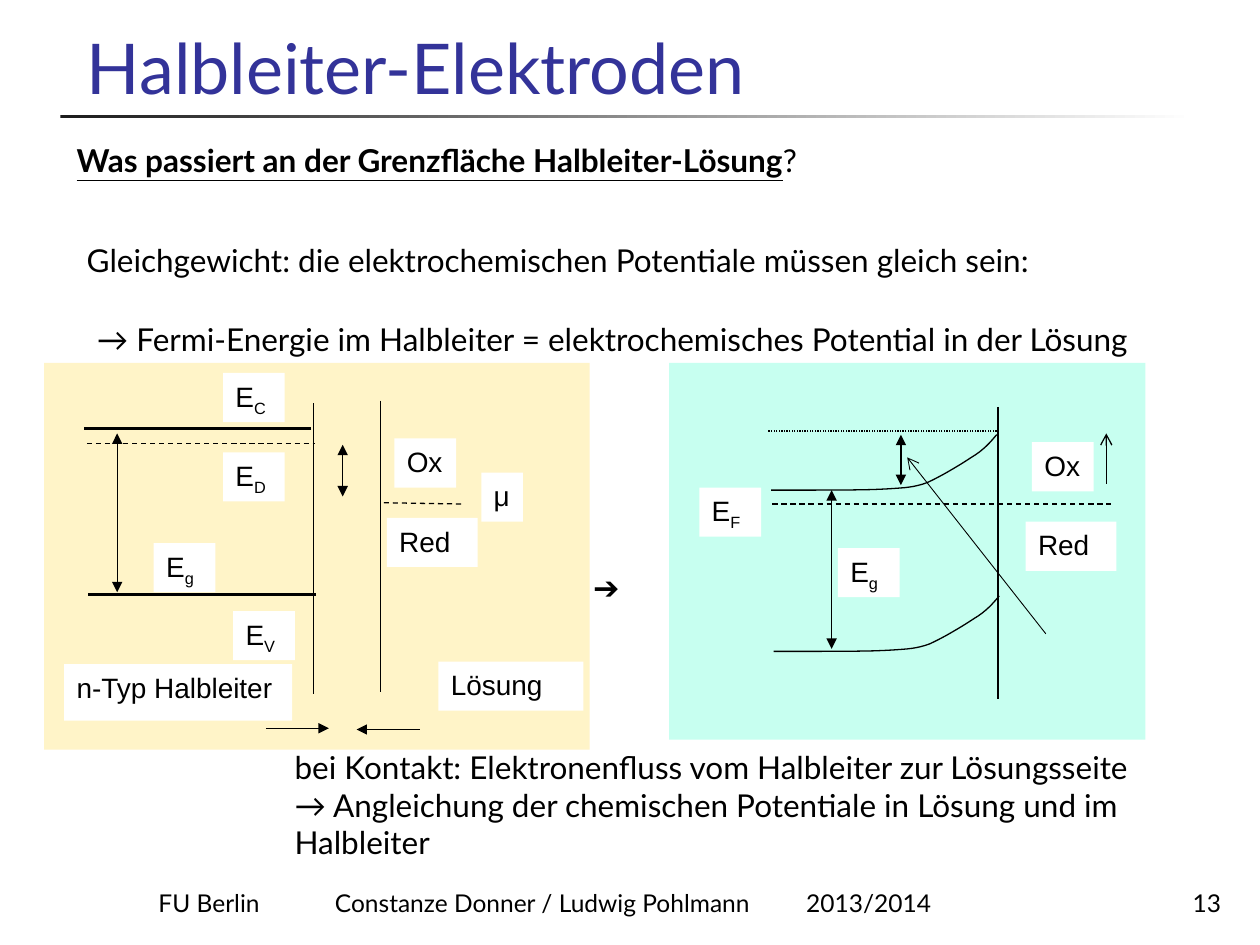
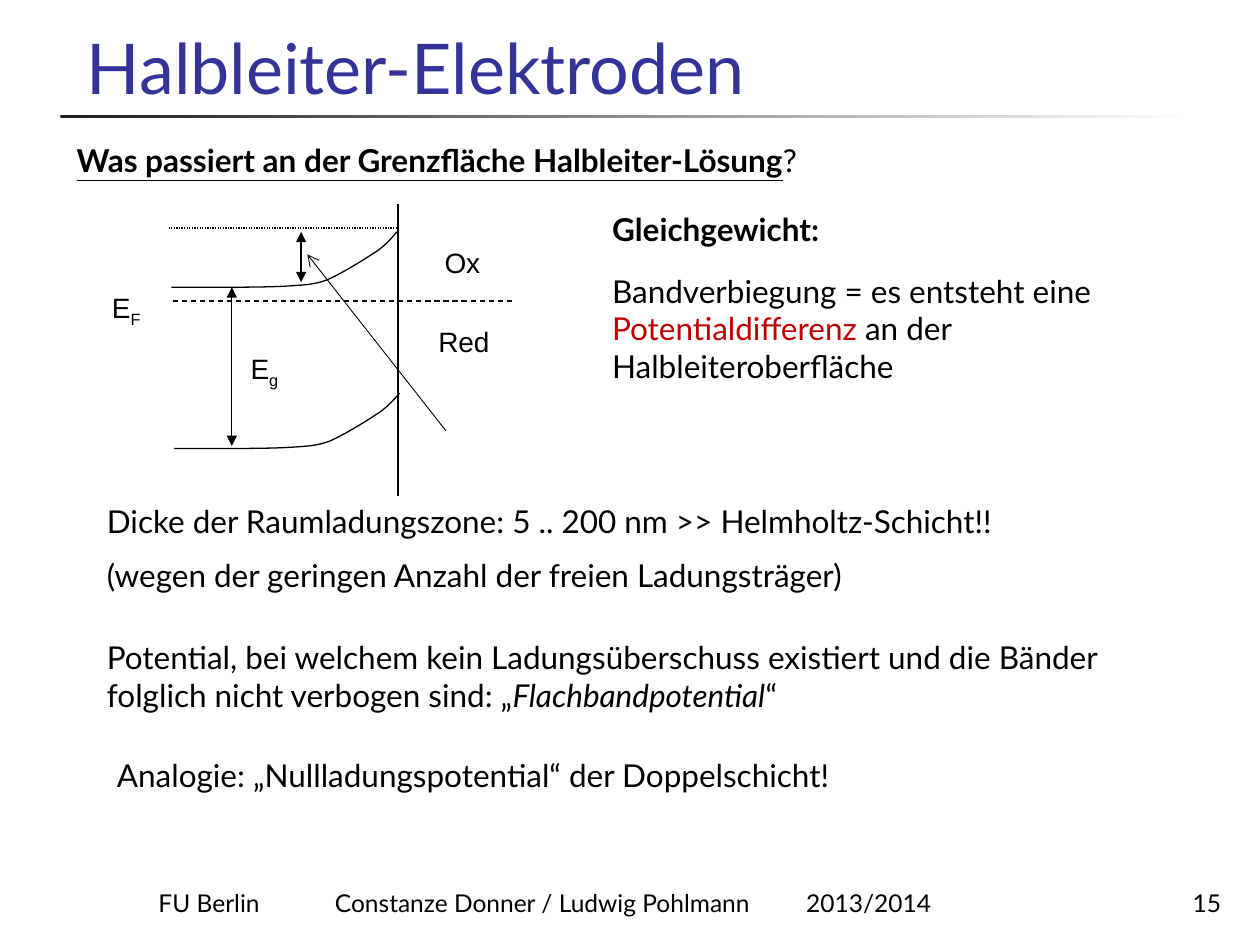
from lxml.etree import SubElement
from pptx import Presentation
from pptx.dml.color import RGBColor
from pptx.enum.dml import MSO_LINE
from pptx.enum.shapes import MSO_CONNECTOR, MSO_SHAPE
from pptx.enum.text import MSO_ANCHOR, MSO_AUTO_SIZE, PP_ALIGN
from pptx.oxml.ns import qn
from pptx.util import Inches, Pt

COLORS = {
    "black": "000000",
    "white": "FFFFFF",
    "title": "333399",
    "accent": "C00000",
    "rule": "1C1C1C",
    "before": "FFF4C8",
    "after": "C7FFF0",
}
RGB = {name: RGBColor.from_string(value) for name, value in COLORS.items()}

presentation = Presentation()
presentation.slide_width = Inches(10)
presentation.slide_height = Inches(7.5)
COLUMN = presentation.slide_width // 100
ROW = presentation.slide_height // 75


def write(slide, box, text, shape=None, size=18, font="Lato", color="black", fill=None,
          anchor=MSO_ANCHOR.MIDDLE, align=PP_ALIGN.LEFT, gap=9):
    left, top, width, height = box
    place = [int(left * COLUMN), int(top * ROW), int(width * COLUMN), int(height * ROW)]
    shape = shape or slide.shapes.add_textbox(*place)
    shape.left, shape.top, shape.width, shape.height = place
    if fill:
        shape.fill.solid()
        shape.fill.fore_color.rgb = RGB[fill]
    frame = shape.text_frame
    frame.word_wrap = True
    frame.auto_size = MSO_AUTO_SIZE.NONE
    frame.vertical_anchor = anchor
    paragraphs = [[(text, {})]] if isinstance(text, str) else text
    for index, runs in enumerate(paragraphs):
        paragraph = frame.add_paragraph() if index else frame.paragraphs[0]
        paragraph.alignment = align
        if index:
            paragraph.space_before = Pt(gap)
        for content, style in runs:
            run = paragraph.add_run()
            run.text = content
            run.font.name = font
            run.font.size = Pt(size)
            run.font.bold = style.get("bold")
            run.font.italic = style.get("italic")
            run.font.underline = style.get("underline")
            run.font.color.rgb = RGB[style.get("color", color)]
            if style.get("subscript"):
                run.font._element.set("baseline", "-25000")
    return shape


def draw_line(slide, start, end, width=0.75, dash=None, head=None, tail=None):
    line = slide.shapes.add_connector(
        MSO_CONNECTOR.STRAIGHT, int(start[0] * COLUMN), int(start[1] * ROW),
        int(end[0] * COLUMN), int(end[1] * ROW))
    line.line.color.rgb = RGB["black"]
    line.line.width = Pt(width)
    if dash:
        line.line.dash_style = dash
    properties = line._element.spPr
    outline = properties.find(qn("a:ln"))
    for tag, kind in (("a:headEnd", head), ("a:tailEnd", tail)):
        if kind:
            SubElement(outline, qn(tag)).set("type", kind)
    SubElement(properties, qn("a:effectLst"))


BOTH_ENDS = {"head": "triangle", "tail": "triangle"}
DASHED = {"dash": MSO_LINE.DASH}
LABEL_HEIGHT = 3.9
BAND_BEND = [
    (0, 0), (1, 0), (2, 0), (3.5, 0), (5.1, 0), (7.8, 0), (9.3, -0.1), (10.7, -0.2),
    (11.3, -0.2), (12.4, -0.6), (13.5, -1.1), (15, -2), (15.9, -2.6), (16.9, -3.2),
    (17.4, -3.8), (17.9, -4.4),
]
BAND_STARTS = [(61.2, 38.9), (61.4, 51.7)]
BENT_BAND_LINES = [
    ((61.3, 40), (88.2, 40), DASHED),
    ((79.2, 32.3), (79.2, 55.5), {}),
    ((66, 38.9), (66, 51.5), BOTH_ENDS),
    ((83, 50.3), (72, 36.3), {"width": 0.5, "tail": "arrow"}),
    ((71.5, 34.5), (71.5, 38.5), BOTH_ENDS),
    ((79.1, 34.2), (60.9, 34.2), {"dash": MSO_LINE.ROUND_DOT}),
]
BENT_BAND_LABELS = [
    (81.9, 35.1, 4.9, "Ox"), (81.4, 41.4, 7.2, "Red"),
    (55.5, 38.7, 4.9, "E_F"), (66.5, 43.5, 4.9, "E_g"),
]
FLAT_BAND_LABELS = [
    (31.3, 34.8, 4.9, "Ox"), (30.7, 41.1, 7.2, "Red"), (38.2, 37.5, 3.3, "μ"),
    (17.7, 29.6, 4.9, "E_C"), (17.7, 35.9, 4.9, "E_D"), (12.2, 43.1, 4.9, "E_g"),
    (18.5, 48.5, 4.9, "E_V"), (34.8, 52.5, 11.5, "Lösung"),
    (5.1, 52.7, 18.1, "n-Typ Halbleiter"),
]
FLAT_BAND_LINES = [
    ((24.7, 34), (6.7, 34), {"width": 1.5}),
    ((25.1, 47.2), (7, 47.2), {"width": 1.5}),
    ((6.9, 35.2), (25, 35.2), DASHED),
    ((36.6, 40), (30.3, 39.9), DASHED),
    ((24.9, 32), (24.9, 55.1), {}),
    ((30.2, 31.8), (30.2, 54.9), {}),
    ((9.3, 34.4), (9.3, 47), BOTH_ENDS),
    ((27.2, 35.3), (27.2, 39.4), BOTH_ENDS),
    ((21.1, 57.8), (26.1, 57.8), {"tail": "triangle"}),
    ((33.3, 57.9), (28.3, 57.9), {"tail": "triangle"}),
    ((87.8, 34.4), (87.8, 38.4), {"head": "arrow"}),
]
PANELS = [((53.1, 28.8, 37.8, 29.9), "after"), ((3.5, 28.8, 43.3, 30.7), "before")]

CONTACT_TEXTS = [
    ((5.9, 18.6, 77.4, 4),
     "Gleichgewicht: die elektrochemischen Potentiale müssen gleich sein:"),
    ((6.7, 24.9, 85.1, 4),
     "→ Fermi-Energie im Halbleiter = elektrochemisches Potential in der Lösung"),
    ((22.4, 58.8, 69.3, 10.1),
     "bei Kontakt: Elektronenfluss vom Halbleiter zur Lösungsseite → Angleichung der "
     "chemischen Potentiale in Lösung und im Halbleiter"),
    ((46.1, 44.6, 6.3, 4), "➔"),
]
EQUILIBRIUM_TEXTS = [
    ((47.6, 16.2, 20.9, 4), [[("Gleichgewicht:", {"bold": True})]]),
    ((47.6, 21, 41.7, 10.1), [[
        ("Bandverbiegung = es entsteht eine ", {}),
        ("Potentialdifferenz", {"color": "accent"}),
        (" an der Halbleiteroberfläche", {})]]),
    ((7.5, 39.2, 87.4, 8.6), [
        [("Dicke der Raumladungszone: 5 .. 200 nm >> Helmholtz-Schicht!!", {})],
        [("(wegen der geringen Anzahl der freien Ladungsträger)", {})]]),
    ((7.5, 50.1, 85.8, 7.1), [[
        ("Potential, bei welchem kein Ladungsüberschuss existiert und die Bänder "
         "folglich nicht verbogen sind: „", {}),
        ("Flachbandpotential", {"italic": True}), ("“", {})]]),
    ((8.3, 59.5, 59.3, 4), "Analogie: „Nullladungspotential“ der Doppelschicht!"),
]
QUESTION = [[
    ("Was passiert an der Grenzfläche Halbleiter-Lösung", {"bold": True, "underline": True}),
    ("?", {})]]
FOOTER = "FU Berlin\tConstanze Donner / Ludwig Pohlmann\t2013/2014"
FOOTER_TABS = [14, 51.4]

SLIDES = [
    {"number": "13", "shift": (0, 0), "texts": CONTACT_TEXTS, "panels": PANELS,
     "lines": FLAT_BAND_LINES, "labels": FLAT_BAND_LABELS},
    {"number": "15", "shift": (-47.6, -16.1), "texts": EQUILIBRIUM_TEXTS, "panels": [],
     "lines": [], "labels": []},
]

for content in SLIDES:
    slide = presentation.slides.add_slide(presentation.slide_layouts[5])
    write(slide, (5.9, 2.3, 91.9, 6.8), "Halbleiter-Elektroden", shape=slide.shapes.title,
          size=40, color="title", anchor=MSO_ANCHOR.BOTTOM)

    for (left, top, width, height), color in [((4.8, 9.1, 90, 0.3), "rule")] + content["panels"]:
        rectangle = slide.shapes.add_shape(
            MSO_SHAPE.RECTANGLE, int(left * COLUMN), int(top * ROW),
            int(width * COLUMN), int(height * ROW))
        rectangle.shadow.inherit = False
        rectangle.line.fill.background()
        if color == "rule":
            rectangle.fill.gradient()
            rectangle.fill.gradient_angle = 0
            for stop, shade in zip(rectangle.fill.gradient_stops, ("rule", "white")):
                stop.color.rgb = RGB[shade]
        else:
            rectangle.fill.solid()
            rectangle.fill.fore_color.rgb = RGB[color]

    footer = write(slide, (11.6, 68.3, 71.4, 5), FOOTER, size=14, anchor=MSO_ANCHOR.BOTTOM)
    tab_list = SubElement(footer.text_frame.paragraphs[0]._p.get_or_add_pPr(), qn("a:tabLst"))
    for position in FOOTER_TABS:
        tab = SubElement(tab_list, qn("a:tab"))
        tab.set("pos", str(int(position * COLUMN)))
        tab.set("algn", "l")
    write(slide, (84.7, 68.3, 13.2, 5), content["number"], size=14,
          anchor=MSO_ANCHOR.BOTTOM, align=PP_ALIGN.RIGHT)
    write(slide, (5.1, 10.7, 66.8, 4), QUESTION)
    for box, text in content["texts"]:
        write(slide, box, text)

    shift_x, shift_y = content["shift"]
    labels = [(left + shift_x, top + shift_y, width, text)
              for left, top, width, text in BENT_BAND_LABELS]
    for left, top, width, text in labels + content["labels"]:
        base, _, subscript = text.partition("_")
        runs = [(base, {})] + ([(subscript, {"subscript": True})] if subscript else [])
        height = 4.5 if text.startswith("n-Typ") else LABEL_HEIGHT
        write(slide, (left, top, width, height), [runs], size=16, font="Arial",
              fill="white", anchor=MSO_ANCHOR.TOP)

    for start_x, start_y in BAND_STARTS:
        controls = [((start_x + shift_x + x) * COLUMN, (start_y + shift_y + y) * ROW)
                    for x, y in BAND_BEND]
        points = []
        for first in range(0, len(controls) - 1, 3):
            for step in range(1, 9):
                t = step / 8
                weights = ((1 - t) ** 3, 3 * t * (1 - t) ** 2, 3 * t ** 2 * (1 - t), t ** 3)
                points.append(tuple(
                    sum(weight * control[axis]
                        for weight, control in zip(weights, controls[first:first + 4]))
                    for axis in (0, 1)))
        builder = slide.shapes.build_freeform(*controls[0])
        builder.add_line_segments(points, close=False)
        band = builder.convert_to_shape()
        band.shadow.inherit = False
        band.fill.background()
        band.line.color.rgb = RGB["black"]
        band.line.width = Pt(0.75)

    for start, end, style in BENT_BAND_LINES:
        draw_line(slide, (start[0] + shift_x, start[1] + shift_y),
                  (end[0] + shift_x, end[1] + shift_y), **style)
    for start, end, style in content["lines"]:
        draw_line(slide, start, end, **style)

presentation.save("out.pptx")
